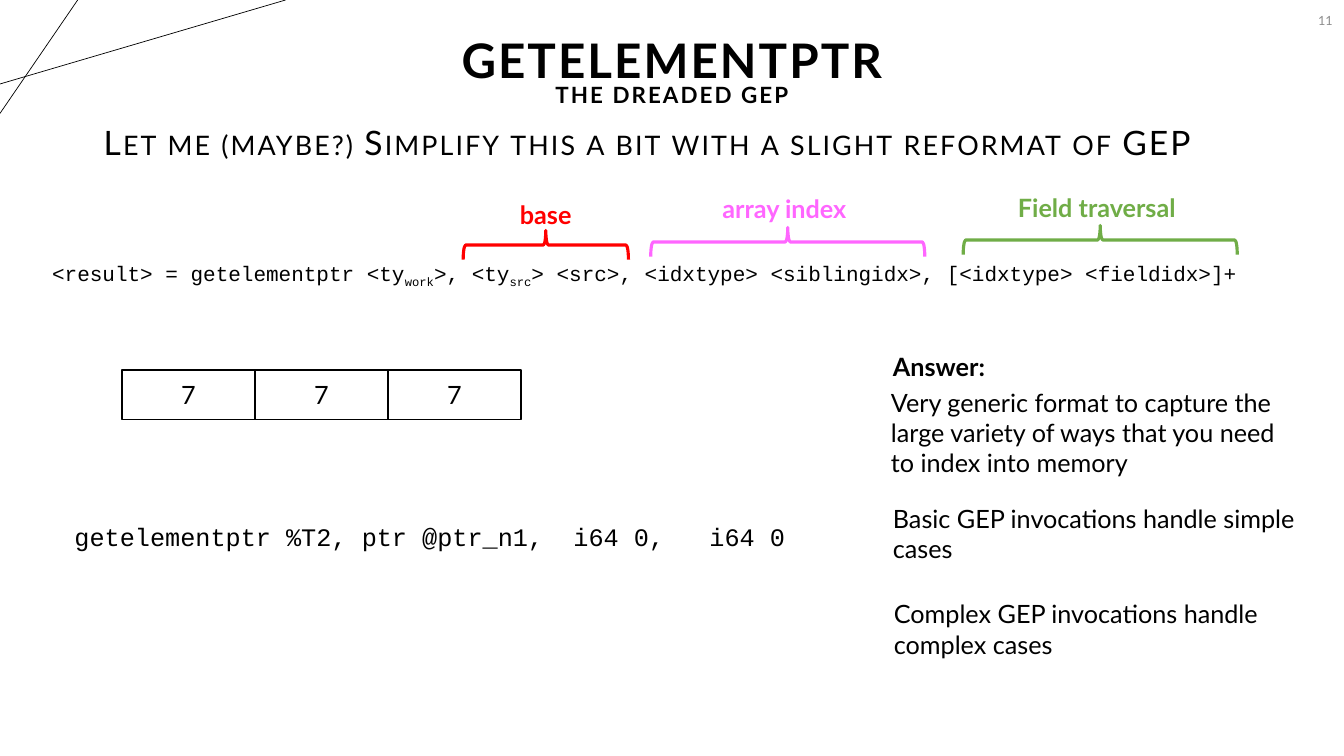
import pptx
import pptx.dml.color
import pptx.enum.shapes
import pptx.enum.text
import pptx.oxml
import pptx.oxml.ns
import pptx.util

Pt = pptx.util.Pt
MIDDLE = pptx.enum.text.MSO_ANCHOR.MIDDLE
TOP = pptx.enum.text.MSO_ANCHOR.TOP
LEFT = pptx.enum.text.PP_ALIGN.LEFT
CENTER = pptx.enum.text.PP_ALIGN.CENTER
RIGHT = pptx.enum.text.PP_ALIGN.RIGHT


def color(hex_string):
    return pptx.dml.color.RGBColor.from_string(hex_string)


def write(shape, texts, size, font="Lato", ink="000000", bold=False,
          align=LEFT, anchor=TOP, spacing=None):
    """Fill the shape with one paragraph, one run per text; spacing is in 1/100 pt."""
    frame = shape.text_frame
    frame.word_wrap = True
    frame.auto_size = pptx.enum.text.MSO_AUTO_SIZE.NONE
    frame.vertical_anchor = anchor
    paragraph = frame.paragraphs[0]
    paragraph.alignment = align
    for text in texts:
        run = paragraph.add_run()
        run.text = text
        run.font.name = font
        run.font.size = Pt(size)
        run.font.bold = bold
        run.font.color.rgb = color(ink)
        if spacing:
            run.font._element.set("spc", str(spacing))
            paragraph.line_spacing = 0.9
    return paragraph


presentation = pptx.Presentation()
presentation.slide_width = Pt(960)
presentation.slide_height = Pt(540)
slide = presentation.slides.add_slide(presentation.slide_layouts[5])
shapes = slide.shapes

# Corner lines
for x1, y1, x2, y2 in [(0, 60, 204, 0), (55.5, 0, 0, 81)]:
    line = shapes.add_connector(pptx.enum.shapes.MSO_CONNECTOR.STRAIGHT,
                                Pt(x1), Pt(y1), Pt(x2), Pt(y2))
    line.line.color.rgb = color("000000")
    line.line.width = Pt(0.5)
    line._element.spPr.append(pptx.oxml.parse_xml(
        "<a:effectLst %s/>" % pptx.oxml.ns.nsdecls("a")))

# Headings
page_number = shapes.add_textbox(Pt(743), Pt(0), Pt(216), Pt(28.8))
write(page_number, ["11"], 9, ink="8C8C8C", align=RIGHT, anchor=MIDDLE)

title = shapes.title
title.left, title.top, title.width, title.height = Pt(0.7), Pt(-7.2), Pt(958.6), Pt(104.4)
write(title, ["GETELEMENTPTR"], 34, bold=True, align=CENTER, anchor=MIDDLE, spacing=150)

subtitle = shapes.add_textbox(Pt(0.7), Pt(16.6), Pt(958.6), Pt(104.4))
write(subtitle, ["THE DREADED GEP"], 16, bold=True, align=CENTER, anchor=MIDDLE, spacing=150)

lead = shapes.add_textbox(Pt(67), Pt(87.1), Pt(854), Pt(54))
paragraph = write(lead, ["Let me (maybe?) Simplify this a bit with a slight reformat of GEP"],
                  24, spacing=150)
paragraph.space_before = Pt(10)
paragraph.runs[0].font._element.set("cap", "small")

# Instruction syntax, with every second run as a subscript
syntax = shapes.add_textbox(Pt(30.2), Pt(182.2), Pt(918.7), Pt(25.2))
paragraph = write(syntax, ["<result> = getelementptr <ty", "work", ">, <ty", "src",
                           "> <src>, <idxtype> <siblingidx>, [<idxtype> <fieldidx>]+"],
                  15, font="Courier New")
for run in paragraph.runs[1::2]:
    run.font._element.set("baseline", "-25000")

# Braces over the syntax: label, colour, brace centre and length, label box
brace_depth = 20.9
for label, ink, center_x, center_y, length, left, top, width in [
        ("base", "FF0000", 389.9, 175, 118.1, 364.3, 139, 56),
        ("array index", "FF66FF", 562.7, 172.8, 195.8, 509, 134.6, 105.8),
        ("Field traversal", "70AD47", 785.9, 171.4, 195.8, 720, 133.9, 135.4)]:
    brace = shapes.add_shape(pptx.enum.shapes.MSO_SHAPE.RIGHT_BRACE,
                             Pt(center_x - brace_depth / 2), Pt(center_y - length / 2),
                             Pt(brace_depth), Pt(length))
    brace.rotation = 270
    brace.shadow.inherit = False
    brace.fill.background()
    brace.line.color.rgb = color(ink)
    brace.line.width = Pt(2.25)
    label_box = shapes.add_textbox(Pt(left), Pt(top), Pt(width), Pt(28.8))
    write(label_box, [label], 18, ink=ink, bold=True)

# Answer column
for text, left, top, width, height, bold in [
        ("Answer:", 630.7, 247.7, 108.7, 28.8, True),
        ("Very generic format to capture the large variety of ways "
         "that you need to index into memory", 629.3, 272.9, 303.8, 72.7, False),
        ("Basic GEP invocations handle simple cases", 630.7, 355.7, 303.8, 51, False),
        ("Complex GEP invocations handle complex cases", 631.4, 424.1, 303.8, 51, False)]:
    answer = shapes.add_textbox(Pt(left), Pt(top), Pt(width), Pt(height))
    write(answer, [text], 18, bold=bold)

# Example call, its index operands set on tab stops
example = shapes.add_textbox(Pt(46.1), Pt(368.6), Pt(524.9), Pt(28.8))
paragraph = write(example, ["getelementptr %T2, ptr @ptr_n1,\ti64 0,\ti64 0"],
                  18, font="Courier New")
tab_stops = "".join('<a:tab pos="%d" algn="l"/>' % Pt(stop) for stop in (356.4, 453.6))
paragraph._p.get_or_add_pPr().append(pptx.oxml.parse_xml(
    "<a:tabLst %s>%s</a:tabLst>" % (pptx.oxml.ns.nsdecls("a"), tab_stops)))

# Array in memory
cell_width = 95
for index in range(3):
    cell = shapes.add_shape(pptx.enum.shapes.MSO_SHAPE.RECTANGLE,
                            Pt(87.1 + index * cell_width), Pt(264.4),
                            Pt(cell_width), Pt(35.3))
    cell.shadow.inherit = False
    cell.fill.solid()
    cell.fill.fore_color.rgb = color("FFFFFF")
    cell.line.color.rgb = color("000000")
    cell.line.width = Pt(1)
    write(cell, ["7"], 18, align=CENTER, anchor=MIDDLE)

presentation.save("out.pptx")
